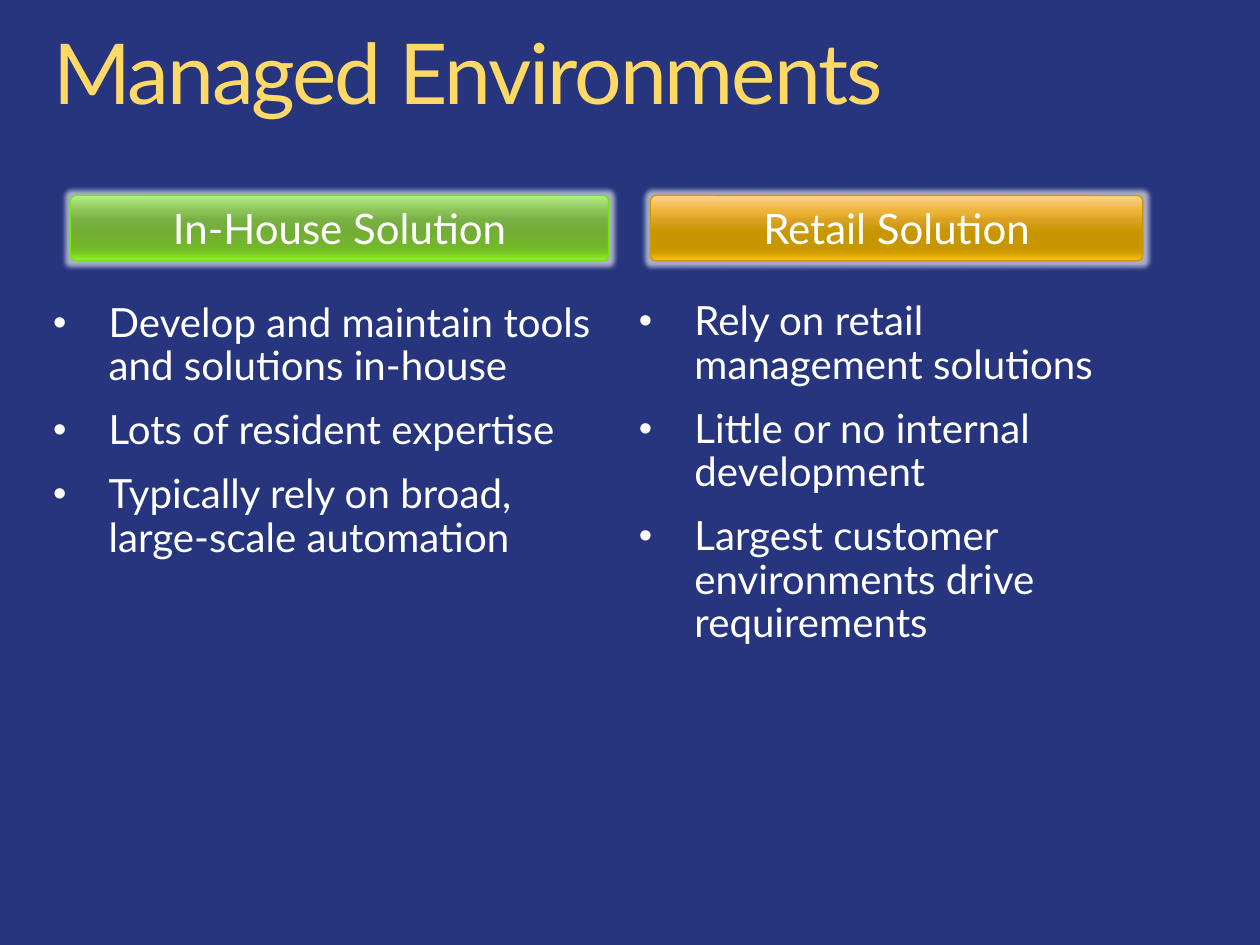
from lxml.etree import SubElement
from pptx import Presentation
from pptx.dml.color import RGBColor
from pptx.enum.shapes import MSO_SHAPE
from pptx.enum.text import MSO_ANCHOR, PP_ALIGN
from pptx.oxml.ns import qn
from pptx.util import Cm, Pt

FONT = "Lato"
COLORS = {"background": "26357E", "title": "FFD966", "text": "FFFFFF", "glow": "FFFFFF"}
STOPS = (0, 25, 38, 55, 80, 88, 100)

TITLE = "Managed Environments"
# Left and width are in centimetres; \v is a line break.
COLUMNS = [
    {
        "heading": "In-House Solution",
        "heading_left": 1.42, "heading_width": 10.85,
        "gradient": ("B6EF8B", "8AC155", "79B044", "73AD35", "72B828", "78CA22", "94F32F"),
        "line": "77E700",
        "list_left": 1.07, "list_top": 6.1, "list_height": 6.6,
        "points": [
            "Develop and maintain tools\vand solutions in-house",
            "Lots of resident expertise",
            "Typically rely on broad, \vlarge-scale automation",
        ],
    },
    {
        "heading": "Retail Solution",
        "heading_left": 13.11, "heading_width": 9.93,
        "gradient": ("FFD390", "ECB335", "DAA123", "C89600", "C69500", "D19D00", "FFC018"),
        "line": "CC9A00",
        "list_left": 12.88, "list_top": 6.07, "list_height": 8.36,
        "points": [
            "Rely on retail \vmanagement solutions",
            "Little or no internal development",
            "Largest customer environments drive requirements",
        ],
    },
]
HEADING_TOP, HEADING_HEIGHT = 3.94, 1.32
LIST_WIDTH = 11.46
INDENT = Cm(1.12)


def rgb(value):
    return RGBColor.from_string(value)


def style(paragraph, size, color):
    font = paragraph.font
    font.name, font.size = FONT, Pt(size)
    font.color.rgb = rgb(color)


def add_box(page, left, top, width, height):
    """Add a wrapping text box without margins and return its text frame."""
    frame = page.shapes.add_textbox(Cm(left), Cm(top), Cm(width), Cm(height)).text_frame
    frame.word_wrap = True
    frame.margin_left = frame.margin_right = frame.margin_top = frame.margin_bottom = 0
    return frame


def add_bullet(paragraph):
    properties = paragraph._p.get_or_add_pPr()
    properties.set("marL", str(INDENT))
    properties.set("indent", str(-INDENT))
    bullet_color = SubElement(properties, qn("a:buClr"))
    SubElement(bullet_color, qn("a:srgbClr"), val=COLORS["text"])
    SubElement(properties, qn("a:buSzPct"), val="95000")
    SubElement(properties, qn("a:buFont"), typeface="Arial")
    SubElement(properties, qn("a:buChar"), char="•")


def fill_gradient(shape, colors):
    """Fill from top to bottom with one colour at each of STOPS."""
    shape.fill.gradient()
    shape.fill.gradient_angle = 270
    stop_list = shape._element.spPr.find(".//" + qn("a:gsLst"))
    stop_list.clear()
    for position, color in zip(STOPS, colors):
        stop = SubElement(stop_list, qn("a:gs"), pos=str(position * 1000))
        SubElement(stop, qn("a:srgbClr"), val=color)


def add_glow(shape):
    shape.shadow.inherit = False
    effects = shape._element.spPr.find(qn("a:effectLst"))
    glow = SubElement(effects, qn("a:glow"), rad=str(Pt(5)))
    color = SubElement(glow, qn("a:srgbClr"), val=COLORS["glow"])
    SubElement(color, qn("a:alpha"), val="60000")


def add_title(page):
    paragraph = add_box(page, 1.07, 0.64, 23.27, 1.85).paragraphs[0]
    paragraph.text = TITLE
    paragraph.line_spacing = 0.9
    style(paragraph, 48, COLORS["title"])
    for span in paragraph.runs:
        span._r.get_or_add_rPr().set("spc", "-120")


def add_heading(page, column):
    shape = page.shapes.add_shape(
        MSO_SHAPE.ROUNDED_RECTANGLE, Cm(column["heading_left"]), Cm(HEADING_TOP),
        Cm(column["heading_width"]), Cm(HEADING_HEIGHT))
    shape.adjustments[0] = 0.09
    fill_gradient(shape, column["gradient"])
    shape.line.color.rgb = rgb(column["line"])
    shape.line.width = Pt(0.75)
    add_glow(shape)
    shape.text_frame.vertical_anchor = MSO_ANCHOR.MIDDLE
    paragraph = shape.text_frame.paragraphs[0]
    paragraph.text = column["heading"]
    paragraph.alignment = PP_ALIGN.CENTER
    style(paragraph, 24, COLORS["text"])


def add_points(page, column):
    frame = add_box(page, column["list_left"], column["list_top"],
                    LIST_WIDTH, column["list_height"])
    for index, point in enumerate(column["points"]):
        paragraph = frame.add_paragraph() if index else frame.paragraphs[0]
        paragraph.text = point
        add_bullet(paragraph)
        paragraph.line_spacing = 0.9
        if index:
            paragraph.space_before = Pt(11.7)
        style(paragraph, 23, COLORS["text"])


def main():
    deck = Presentation()
    deck.slide_width, deck.slide_height = Cm(25.4), Cm(19.05)
    page = deck.slides.add_slide(deck.slide_layouts[6])
    page.background.fill.solid()
    page.background.fill.fore_color.rgb = rgb(COLORS["background"])
    add_title(page)
    for column in COLUMNS:
        add_heading(page, column)
        add_points(page, column)
    deck.save("out.pptx")


if __name__ == "__main__":
    main()
